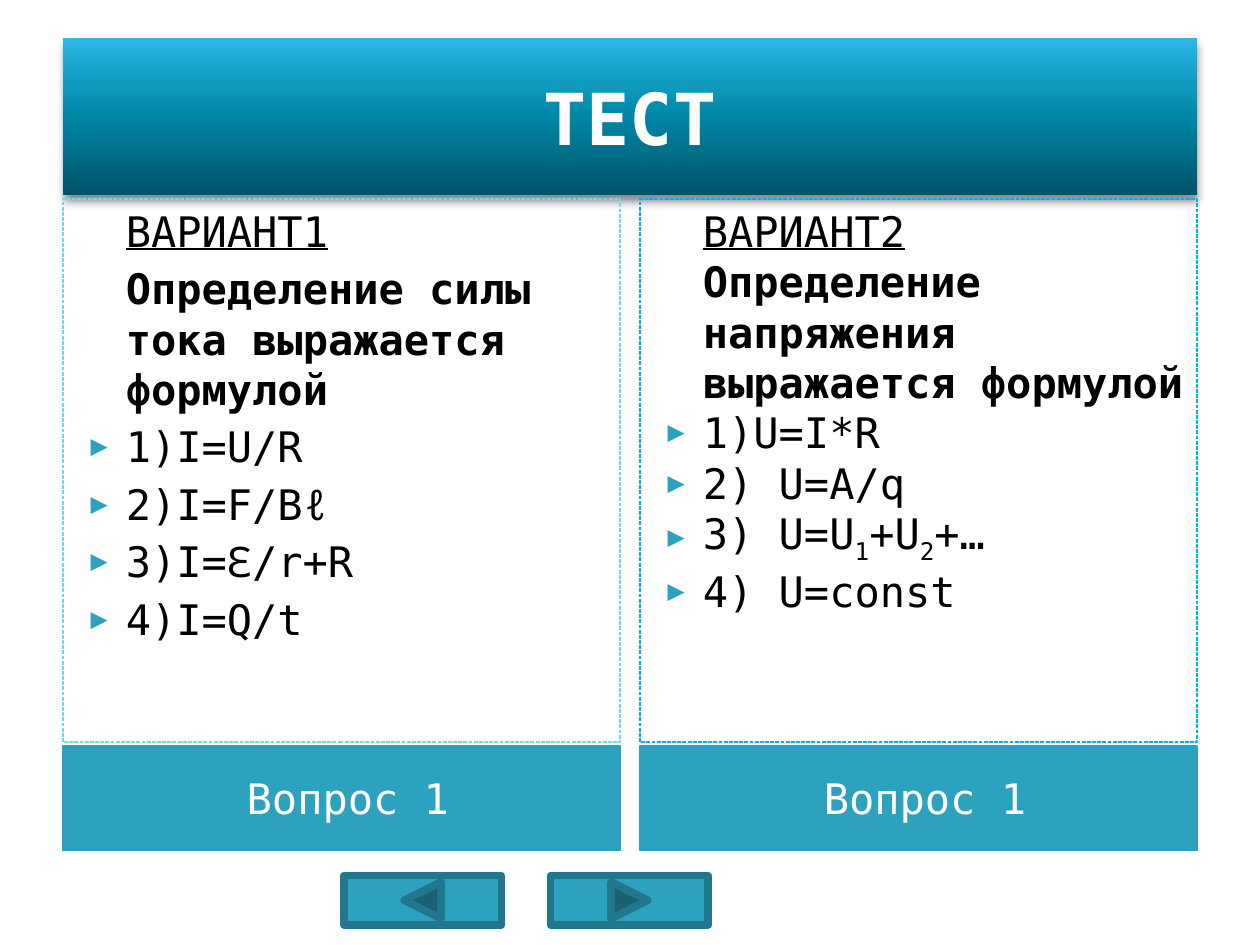
from dataclasses import dataclass

from lxml import etree
from pptx import Presentation
from pptx.dml.color import RGBColor
from pptx.enum import dml, shapes, text
from pptx.oxml import ns
from pptx.util import Pt


@dataclass(frozen=True)
class Theme:
    font: str = "DejaVu Sans Mono"
    title_size: float = 41
    body_size: float = 24
    ink: str = "000000"
    paper: str = "FFFFFF"
    accent: str = "2DA2BF"
    accent_dark: str = "21788D"
    left_border: str = "78D6EA"
    right_border: str = "00B0F0"
    banner: tuple = ((0, "005367"), (50, "0086A7"), (70, "0E9ABE"), (100, "2CB9E3"))


def assign(obj, values):
    for name, value in values.items():
        setattr(obj, name, value)


def add(parent, tag, **attrs):
    return etree.SubElement(parent, ns.qn(tag), {k: str(v) for k, v in attrs.items()})


class Deck:
    def __init__(self, theme):
        self.theme = theme
        self.prs = Presentation()
        assign(self.prs, {"slide_width": Pt(720), "slide_height": Pt(540)})
        self.s = self.prs.slides.add_slide(self.prs.slide_layouts[6])

    def shape(self, box, fill=None, line=None, width=0.75, kind="RECTANGLE"):
        sp = self.s.shapes.add_shape(
            getattr(shapes.MSO_SHAPE, kind), *(Pt(v) for v in box))
        sp.shadow.inherit = False
        for part, color in ((sp.fill, fill), (sp.line.fill, line)):
            if color:
                part.solid()
                part.fore_color.rgb = RGBColor.from_string(color)
            else:
                part.background()
        if line:
            sp.line.width = Pt(width)
        return sp

    def frame(self, sp, anchor, left=7.2):
        tf = sp.text_frame
        assign(tf, {"word_wrap": True, "vertical_anchor": anchor,
                    "margin_left": Pt(left), "margin_right": Pt(7.2),
                    "margin_top": Pt(3.6), "margin_bottom": Pt(3.6)})
        return tf

    def style(self, p, color, size=None, **extra):
        assign(p.font, {"name": self.theme.font,
                        "size": Pt(size or self.theme.body_size), **extra})
        p.font.color.rgb = RGBColor.from_string(color)

    def label(self, sp, words, left=7.2, **extra):
        p = self.frame(sp, text.MSO_ANCHOR.MIDDLE, left).paragraphs[0]
        p.text = words
        p.alignment = text.PP_ALIGN.CENTER
        self.style(p, self.theme.paper, **extra)

    def banner(self, box, words):
        """Title bar with a vertical gradient and a soft drop shadow."""
        sp = self.shape(box)
        sp.fill.gradient()
        sp.fill.gradient_angle = 90
        pr = sp.fill._xPr
        stops = pr.find(".//" + ns.qn("a:gsLst"))
        for stop in list(stops):
            stops.remove(stop)
        for pos, color in self.theme.banner:
            add(add(stops, "a:gs", pos=pos * 1000), "a:srgbClr", val=color)
        shadow = add(pr.find(ns.qn("a:effectLst")), "a:outerShdw", blurRad=Pt(5),
                     dist=Pt(3), dir=90 * 60000, rotWithShape=0)
        add(add(shadow, "a:srgbClr", val="000000"), "a:alpha", val=45000)
        self.label(sp, words, size=self.theme.title_size, bold=True)

    def caption(self, box, words):
        sp = self.shape(box, self.theme.accent, self.theme.accent)
        self.label(sp, words, left=14.4)

    def bullet(self, p):
        pPr = p._p.get_or_add_pPr()
        pPr.set("indent", str(Pt(-20.16)))
        add(add(pPr, "a:buClr"), "a:srgbClr", val=self.theme.accent)
        add(pPr, "a:buSzPct", val=68000)
        add(pPr, "a:buFont", typeface=self.theme.font)
        add(pPr, "a:buChar", char="▶")

    def question(self, box, border, heading, prompt, answers, gap):
        """Dashed panel; an answer given as a tuple alternates base and subscript."""
        sp = self.shape(box, line=border)
        sp.line.dash_style = dml.MSO_LINE.SQUARE_DOT
        tf = self.frame(sp, text.MSO_ANCHOR.TOP)
        for i, item in enumerate((heading, prompt, *answers)):
            p = tf.paragraphs[0] if i == 0 else tf.add_paragraph()
            p.alignment = text.PP_ALIGN.LEFT
            p._p.get_or_add_pPr().set("marL", str(Pt(28.8)))
            if i > 1:
                self.bullet(p)
            p.space_before = Pt(gap if i else 0)
            self.style(p, self.theme.ink, underline=i == 0, bold=i == 1)
            for j, part in enumerate((item,) if isinstance(item, str) else item):
                r = p.add_run()
                r.text = part
                if j % 2:
                    r.font._element.set("baseline", "-25000")

    def button(self, box, kind):
        self.shape(box, self.theme.accent, self.theme.accent_dark, 4.33, kind)


def main():
    theme = Theme()
    deck = Deck(theme)
    left, total, column = 36, 648, 318.24
    deck.banner((left, 21.6, total, 90), "ТЕСТ")

    variants = (
        (theme.left_border, "ВАРИАНТ1", "Определение силы тока выражается формулой",
         ("1)I=U/R", "2)I=F/Bℓ", "3)I=ℇ/r+R", "4)I=Q/t"), 4),
        (theme.right_border, "ВАРИАНТ2", "Определение напряжения выражается формулой",
         ("1)U=I*R", "2) U=A/q", ("3) U=U", "1", "+U", "2", "+…"), "4) U=const"), 0),
    )
    for x, variant in zip((left, left + total - column), variants):
        deck.caption((x, 426.24, column, 59.76), "Вопрос 1")
        deck.question((x, 113.76, column, 310.32), *variant)

    for x, kind in ((196.56, "BACK_OR_PREVIOUS"), (314.64, "FORWARD_OR_NEXT")):
        deck.button((x, 500.4, 90, 28.08), "ACTION_BUTTON_" + kind)
    deck.prs.save("out.pptx")


if __name__ == "__main__":
    main()
